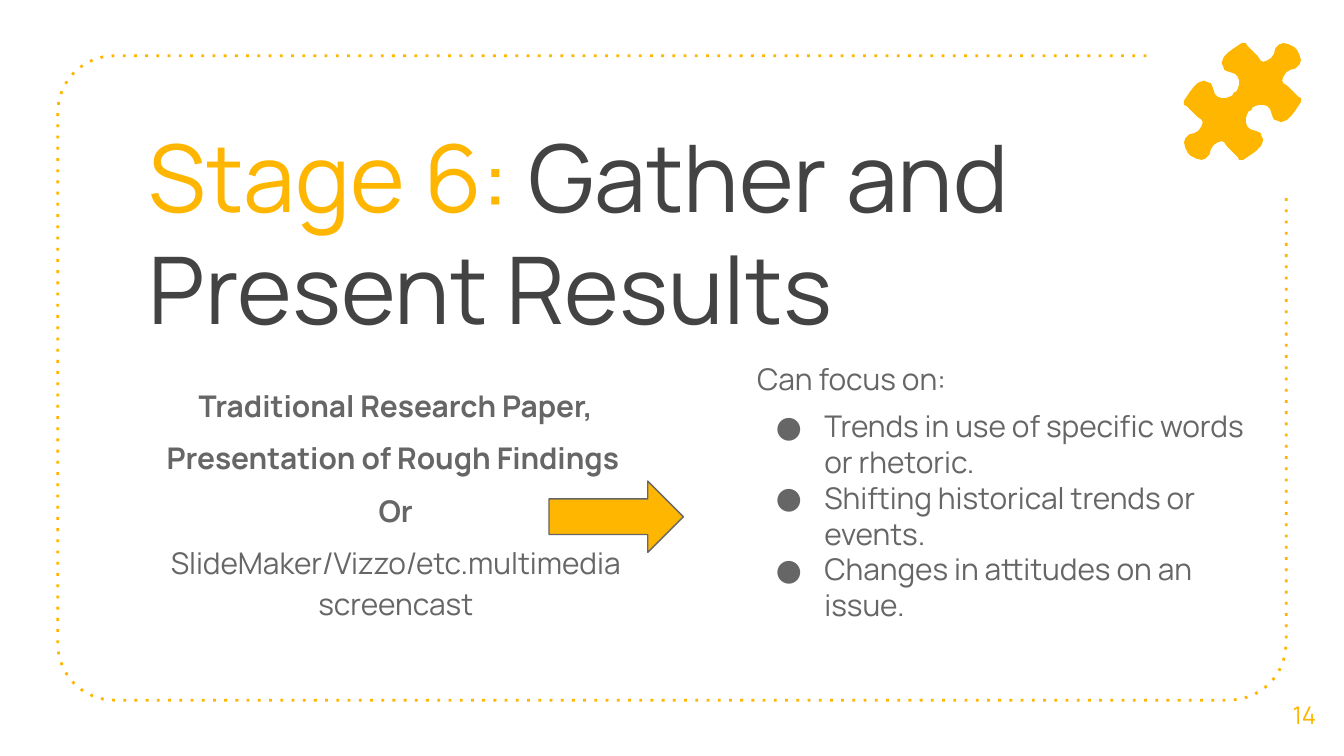
import math
from pptx import Presentation, util as u
from pptx.dml import color
from pptx.enum import dml, shapes, text
from pptx.oxml import ns
from lxml import etree

COLORS = {"gold": "FFB600", "grey": "666666", "dark": "434343"}
FONT = "Manrope"

deck = Presentation()
deck.slide_width = u.Inches(10)
deck.slide_height = deck.slide_width * 9 // 16
page = deck.slides.add_slide(deck.slide_layouts[6])
cell = deck.slide_width / 100


def add_outline(points, close):
    scaled = [(x * cell, y * cell) for x, y in points]
    builder = page.shapes.build_freeform(*scaled[0])
    builder.add_line_segments(scaled[1:], close=close)
    outline = builder.convert_to_shape()
    outline.shadow.inherit = False
    return outline


def add_text(left, top, width, height, size, hue, lines):
    box = page.shapes.add_textbox(*(round(n * cell) for n in (left, top, width, height)))
    frame = box.text_frame
    frame.word_wrap = True
    frame.margin_left = frame.margin_right = frame.margin_top = frame.margin_bottom = round(cell)
    for index, line in enumerate(lines):
        para = frame.paragraphs[0] if index == 0 else frame.add_paragraph()
        para.add_run().text = line
        para.font.size, para.font.name = u.Pt(size), FONT
        para.font.color.rgb = color.RGBColor.from_string(COLORS[hue])
    return frame


left, right, top, bottom, radius = 4.3, 95.7, 4.15, 52.1, 4.2
border_points = [(85.3, top)]
for center_x, center_y, start in (
    (left + radius, top + radius, 270),
    (left + radius, bottom - radius, 180),
    (right - radius, bottom - radius, 90),
):
    for step in range(9):
        angle = math.radians(start - step * 90 / 8)
        border_points.append((center_x + radius * math.cos(angle), center_y + radius * math.sin(angle)))
border_points.append((right, 14.6))
border = add_outline(border_points, False)
border.fill.background()
border.line.color.rgb = color.RGBColor.from_string(COLORS["gold"])
border.line.width = u.Pt(1.5)
border.line.dash_style = dml.MSO_LINE.ROUND_DOT
border._element.spPr.find(".//" + ns.qn("a:prstDash")).set("val", "dot")

formats = add_text(10.05, 27.45, 38.8, 21.9, 16, "grey", [
    "Traditional Research Paper,",
    "Presentation of Rough Findings ",
    "Or",
    "SlideMaker/Vizzo/etc.multimedia screencast",
])
for index, para in enumerate(formats.paragraphs):
    para.alignment = text.PP_ALIGN.CENTER
    para.line_spacing, para.space_before = 1.15, u.Pt(6)
    para.font.bold = index < 3

title = add_text(10.1, 7.9, 82.9, 19.6, 50, "dark", ["Stage 6:"]).paragraphs[0]
title.runs[0].font.color.rgb = color.RGBColor.from_string(COLORS["gold"])
title.add_run().text = " Gather and Present Results"

focus = add_text(55.35, 25.85, 38.8, 22.6, 16, "grey", [
    "Can focus on:",
    "Trends in use of specific words or rhetoric.",
    "Shifting historical trends or events.",
    "Changes in attitudes on an issue.",
])
for para in focus.paragraphs[:2]:
    para.space_before = u.Pt(6)
for para in focus.paragraphs[1:]:
    properties = para._p.get_or_add_pPr()
    properties.set("marL", str(u.Inches(0.5)))
    properties.set("indent", str(u.Inches(-0.36)))
    defaults = properties.find(ns.qn("a:defRPr"))
    bullet_color = etree.Element(ns.qn("a:buClr"))
    etree.SubElement(bullet_color, ns.qn("a:srgbClr"), val=COLORS["grey"])
    defaults.addprevious(bullet_color)
    for tag, attributes in (
        ("a:buSzPts", {"val": "1600"}),
        ("a:buFont", {"typeface": FONT}),
        ("a:buChar", {"char": "●"}),
    ):
        defaults.addprevious(etree.Element(ns.qn(tag), attributes))

number = add_text(94.1, 50.2, 5.9, 6, 13, "gold", ["14"])
number.vertical_anchor = text.MSO_ANCHOR.MIDDLE
number.paragraphs[0].alignment = text.PP_ALIGN.CENTER

socket = [
    (92.4, 3.2), (92.1, 3.4), (91.8, 3.6), (91.4, 3.9), (91.1, 4.2), (91, 4.4),
    (90.9, 4.7), (91, 4.9), (91.1, 5.2), (91.3, 5.3), (91.6, 5.4), (91.9, 5.5),
    (92.1, 5.7), (92.2, 6), (92.2, 6.3), (92.1, 6.6), (92, 6.8), (91.8, 6.9),
]
knob = [
    (88.1, 7.6), (88.1, 7.8), (88.3, 7.9), (88.6, 8.2), (89.1, 8.7), (89.4, 8.9),
    (89.5, 9.1), (89.4, 9.4), (89.2, 9.7), (88.9, 9.9), (88.5, 10), (88.2, 10.3),
    (88.1, 10.6), (88.2, 11), (88.4, 11.4),
]
half = socket + [(y + 84.9, x - 84.9) for x, y in reversed(socket)]
half += knob + [(100 - y, 100 - x) for x, y in reversed(knob)]
puzzle = add_outline(half + [(184.9 - x, 15.1 - y) for x, y in half], True)
puzzle.line.fill.background()

arrow = page.shapes.add_shape(
    shapes.MSO_SHAPE.RIGHT_ARROW, *(round(n * cell) for n in (40.85, 35.8, 10, 5.3)))
arrow.shadow.inherit = False
arrow.line.color.rgb = color.RGBColor.from_string(COLORS["grey"])
arrow.line.width = u.Pt(0.75)
for shape in (puzzle, arrow):
    shape.fill.solid()
    shape.fill.fore_color.rgb = color.RGBColor.from_string(COLORS["gold"])

deck.save("out.pptx")
